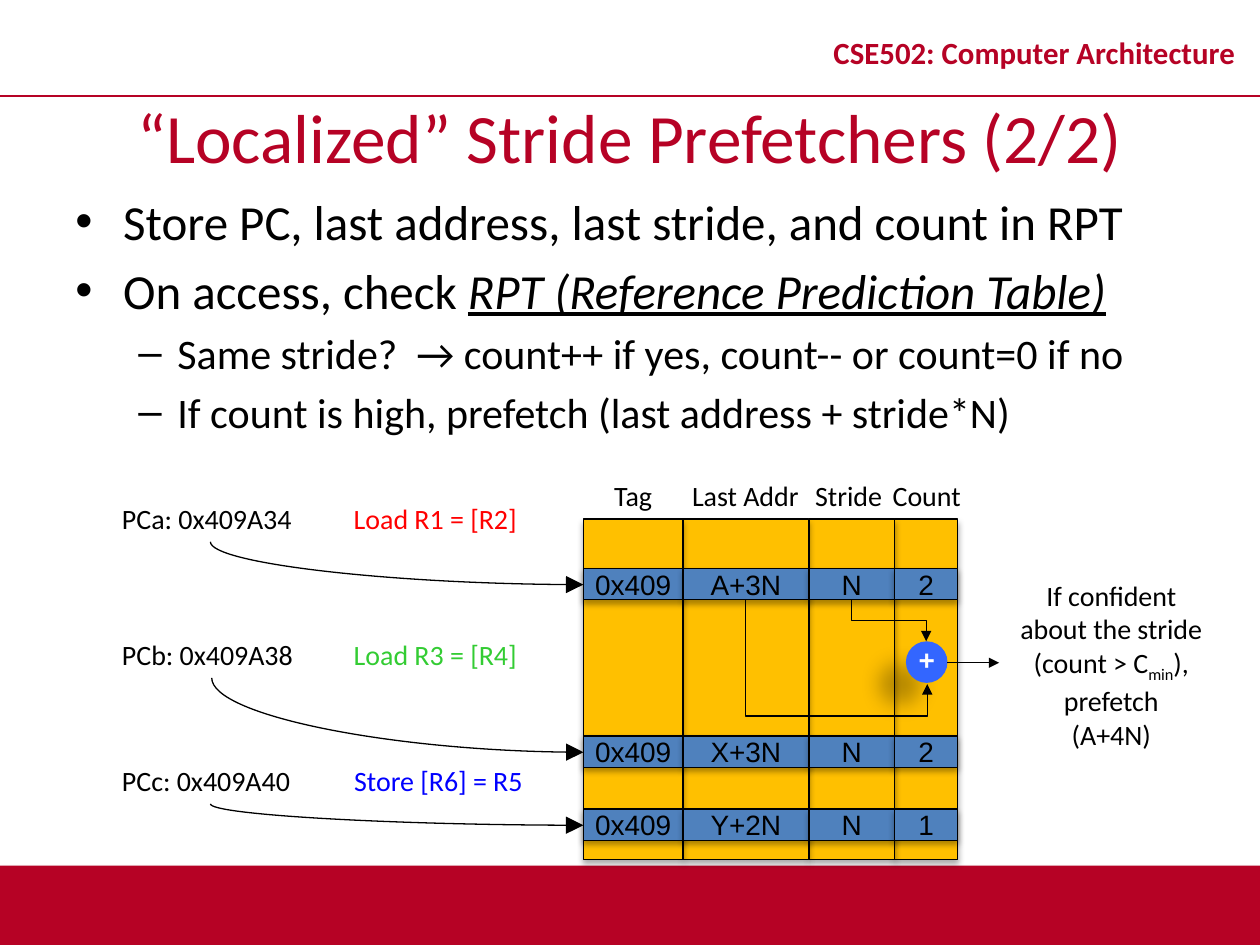
from lxml.etree import SubElement
from pptx import Presentation
from pptx.dml.color import RGBColor
from pptx.enum.shapes import MSO_CONNECTOR as LINE, MSO_SHAPE as SHAPE
from pptx.enum.text import MSO_ANCHOR as ANCHOR, PP_ALIGN as ALIGN
from pptx.oxml.ns import qn
from pptx.util import Inches, Pt

RED, BLACK = "B60225", "000000"
hex_color = RGBColor.from_string


def write(para, text, size=16, font="Calibri", color=BLACK, bold=False,
          italic=False, underline=False, baseline=None):
    """Add one formatted span to a paragraph."""
    span = para.add_run()
    span.text = text
    span.font.size, span.font.name = Pt(size), font
    span.font.color.rgb = hex_color(color)
    span.font.bold, span.font.italic, span.font.underline = bold, italic, underline
    if baseline:
        span.font._element.set("baseline", str(baseline * 1000))


def add_block(kind, at, fill, shadow, outlined=True):
    """Add a filled shape; shadow is opacity %, blur pt, distance pt, degrees."""
    block = page.shapes.add_shape(kind, *map(Inches, at))
    block.fill.solid()
    block.fill.fore_color.rgb = hex_color(fill)
    if outlined:
        block.line.color.rgb = hex_color(BLACK)
        block.line.width = Pt(0.75)
    else:
        block.line.fill.background()
    block.shadow.inherit = False
    opacity, blur, distance, angle = shadow
    effects = block._element.spPr.find(qn("a:effectLst"))
    outer = SubElement(effects, qn("a:outerShdw"), blurRad=str(Pt(blur)),
                       dist=str(Pt(distance)), dir=str(angle * 60000),
                       algn="ctr", rotWithShape="0")
    tint = SubElement(outer, qn("a:srgbClr"), val=BLACK)
    SubElement(tint, qn("a:alpha"), val=str(opacity * 1000))
    frame = block.text_frame
    frame.word_wrap = False
    frame.vertical_anchor = ANCHOR.MIDDLE
    frame.paragraphs[0].alignment = ALIGN.CENTER
    return block


deck = Presentation()
deck.slide_width, deck.slide_height = Inches(10), Inches(7.5)
page = deck.slides.add_slide(deck.slide_layouts[5])

# Title, footer band and course name
title = page.shapes.title
title.left, title.top, title.width, title.height = map(Inches, (0, 0.76, 10, 0.63))
title.text_frame.vertical_anchor = ANCHOR.MIDDLE
title.text_frame.paragraphs[0].alignment = ALIGN.CENTER
write(title.text_frame.paragraphs[0], "“Localized” Stride Prefetchers (2/2)",
      size=39.6, color=RED)

add_block(SHAPE.RECTANGLE, (0, 6.87, 10, 0.63), RED, (35, 3.1, 1.8, 90), outlined=False)

course = page.shapes.add_textbox(*map(Inches, (6.42, 0.13, 3.58, 0.63))).text_frame
course.word_wrap = True
course.vertical_anchor = ANCHOR.MIDDLE
course.paragraphs[0].alignment = ALIGN.CENTER
course.paragraphs[0].line_spacing = 0.8
write(course.paragraphs[0], "CSE502: Computer Architecture", size=17.6, color=RED, bold=True)

# Bullets
bullets = [
    (0, [("Store PC, last address, last stride, and count in RPT", {})]),
    (0, [("On access, check ", {}),
         ("RPT (Reference Prediction Table)", {"italic": True, "underline": True})]),
    (1, [("Same stride?  → count++ if yes, count-- or count=0 if no", {})]),
    (1, [("If count is high, prefetch (last address + stride*N)", {})]),
]
levels = [(28, "•", 0.38, -0.38), (24, "–", 0.81, -0.31)]
body = page.shapes.add_textbox(*map(Inches, (0.5, 1.47, 9, 5.35))).text_frame
body.word_wrap = True
for number, (level, spans) in enumerate(bullets):
    size, mark, margin, indent = levels[level]
    para = body.add_paragraph() if number else body.paragraphs[0]
    para.level = level
    props = para._p.get_or_add_pPr()
    props.set("marL", str(Inches(margin)))
    props.set("indent", str(Inches(indent)))
    SubElement(props, qn("a:buFont"), typeface="Arial")
    SubElement(props, qn("a:buChar"), char=mark)
    if number:
        para.space_before = Pt(size * 0.2)
    for text, style in spans:
        write(para, text, size=size, **style)

# Prediction table: columns, then the filled rows
columns = [(4.63, 0.79), (5.42, 1), (6.42, 0.68), (7.1, 0.5)]
rows = [
    (4.51, ["0x409", "A+3N", "N", "2"]),
    (5.84, ["0x409", "X+3N", "N", "2"]),
    (6.42, ["0x409", "Y+2N", "N", "1"]),
]
table_shadow = (32, 3.5, 2.2, 90)
for left, width in reversed(columns):
    add_block(SHAPE.RECTANGLE, (left, 4.12, width, 2.7), "FFC000", table_shadow)
for top, entries in rows:
    for (left, width), entry in zip(columns, entries):
        cell = add_block(SHAPE.RECTANGLE, (left, top, width, 0.25), "4F81BD", table_shadow)
        write(cell.text_frame.paragraphs[0], entry, font="Arial")

adder = add_block(SHAPE.OVAL, (7.19, 5.09, 0.33, 0.33), "3366FF",
                  (28, 11.8, 19.7, 141), outlined=False)
adder.text_frame.margin_top = 0
write(adder.text_frame.paragraphs[0], "+", font="Arial", color="FFFFFF", bold=True)

# Column headings and instructions
labels = [
    ("Tag", 4.63, 3.75, 0.79, BLACK, ALIGN.CENTER),
    ("Last Addr", 5.42, 3.75, 0.99, BLACK, ALIGN.CENTER),
    ("Stride", 6.34, 3.75, 0.79, BLACK, ALIGN.CENTER),
    ("Count", 6.94, 3.75, 0.83, BLACK, ALIGN.CENTER),
]
instructions = [
    (3.93, "PCa: 0x409A34", "Load R1 = [R2]", 1.61, "FF0000"),
    (5.01, "PCb: 0x409A38", "Load R3 = [R4]", 1.61, "33CC33"),
    (6.01, "PCc: 0x409A40", "Store [R6] = R5", 1.66, "0000FF"),
]
for top, counter, instruction, width, color in instructions:
    labels.append((counter, 0.87, top, 1.6, BLACK, ALIGN.LEFT))
    labels.append((instruction, 2.65, top, width, color, ALIGN.CENTER))
for text, left, top, width, color, align in labels:
    frame = page.shapes.add_textbox(*map(Inches, (left, top, width, 0.37))).text_frame
    frame.word_wrap = False
    if align == ALIGN.CENTER:  # the full width keeps each label on one line
        frame.margin_left = frame.margin_right = 0
    frame.paragraphs[0].alignment = align
    write(frame.paragraphs[0], text, color=color)

# Confidence note
note = page.shapes.add_textbox(*map(Inches, (7.99, 4.54, 1.66, 1.45))).text_frame
note.word_wrap = False
note_lines = [
    [("If confident", None)],
    [("about the stride", None)],
    [("(count > C", None), ("min", -25), ("),", None)],
    [("prefetch", None)],
    [("(A+4N)", None)],
]
for number, spans in enumerate(note_lines):
    para = note.add_paragraph() if number else note.paragraphs[0]
    para.alignment = ALIGN.CENTER
    for text, baseline in spans:
        write(para, text, baseline=baseline)

# Header rule and arrows: preset, start, end, bend position
lines = [
    ("line", (0, 0.76), (10, 0.76), None),
    ("curvedConnector2", (1.67, 4.3), (4.63, 4.64), None),
    ("curvedConnector2", (1.68, 5.38), (4.63, 5.97), None),
    ("curvedConnector2", (1.67, 6.38), (4.63, 6.55), None),
    ("bentConnector3", (6.76, 4.76), (7.35, 5.09), 0.5),
    ("bentConnector3", (5.92, 4.76), (7.36, 5.43), 1.377),
    ("line", (7.52, 5.26), (7.93, 5.26), None),
]
for number, (preset, (x1, y1), (x2, y2), bend) in enumerate(lines):
    is_rule = number == 0
    turned = preset != "line"
    if turned:  # leaves downwards: swap the sides about the centre, then rotate
        mid_x, mid_y = (x1 + x2) / 2, (y1 + y2) / 2
        half_width, half_height = (y2 - y1) / 2, (x2 - x1) / 2
        x1, x2 = mid_x - half_width, mid_x + half_width
        y1, y2 = mid_y - half_height, mid_y + half_height
    line = page.shapes.add_connector(LINE.STRAIGHT, *map(Inches, (x1, y1, x2, y2)))
    line.line.color.rgb = hex_color(RED if is_rule else BLACK)
    line.line.width = Pt(1 if is_rule else 0.75)
    props = line._element.spPr
    if turned:
        line.rotation = 270
        props.find(qn("a:xfrm")).set("flipH", "1")
        shape = props.find(qn("a:prstGeom"))
        shape.set("prst", preset)
        if bend:
            SubElement(shape.find(qn("a:avLst")), qn("a:gd"), name="adj1",
                       fmla=f"val {round(bend * 100000)}")
    if not is_rule:
        head = "lg" if preset == "curvedConnector2" else "med"
        SubElement(props.find(qn("a:ln")), qn("a:tailEnd"), type="triangle", w=head, len=head)
    SubElement(props, qn("a:effectLst"))

deck.save("out.pptx")
